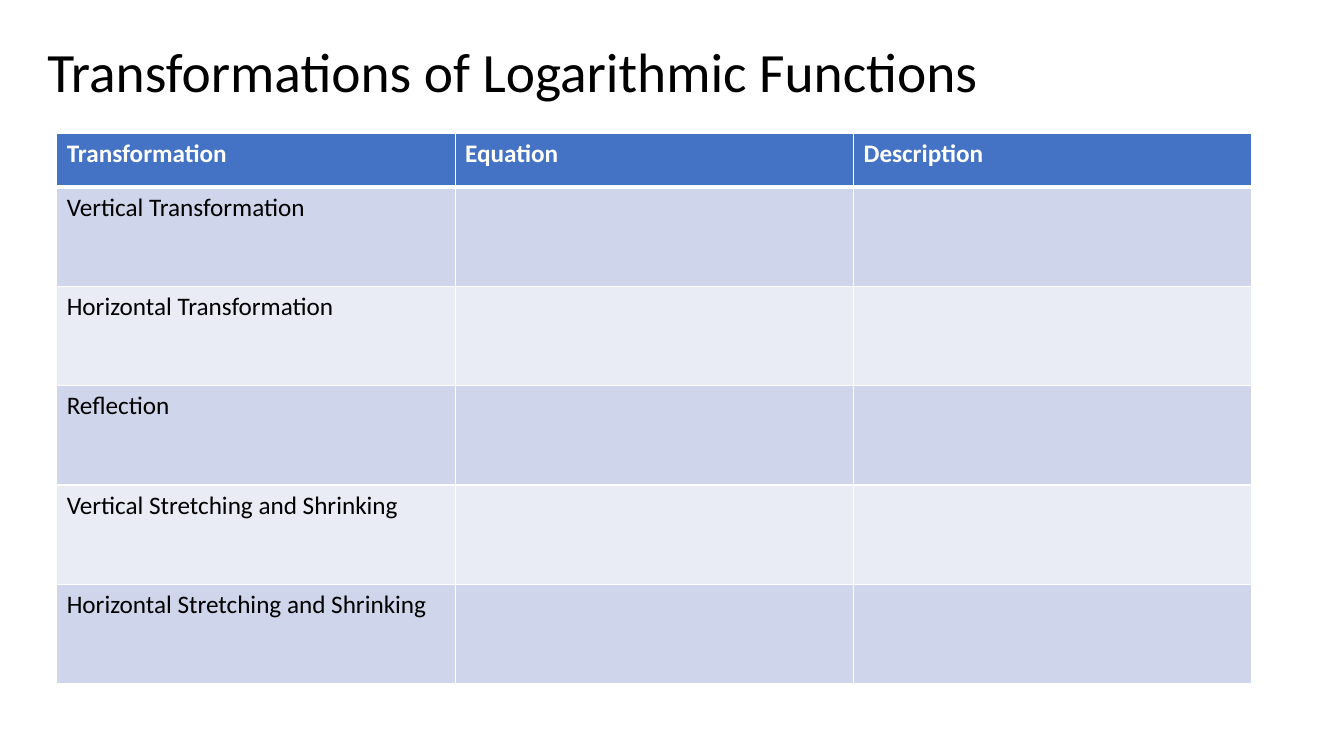
from lxml.etree import SubElement
from pptx import Presentation
from pptx.dml.color import RGBColor
from pptx.enum.text import MSO_ANCHOR, PP_ALIGN
from pptx.oxml.ns import qn
from pptx.util import Pt

HEX = {"head": "4472C4", "dark": "CFD5EA", "light": "E9EBF5",
       "white": "FFFFFF", "black": "000000"}
HEADS = ["Transformation", "Equation", "Description"]
KINDS = ["Vertical Transformation", "Horizontal Transformation", "Reflection",
         "Vertical Stretching and Shrinking",
         "Horizontal Stretching and Shrinking"]


def style(para, size, color, bold=False):
    for run in para.runs:
        run.font.name = "Calibri"
        run.font.size = Pt(size)
        run.font.bold = bold
        run.font.color.rgb = RGBColor.from_string(HEX[color])


def border(cell, side, width):
    line = SubElement(cell._tc.get_or_add_tcPr(), qn(f"a:ln{side}"), w=str(Pt(width)))
    fill = SubElement(line, qn("a:solidFill"))
    SubElement(fill, qn("a:srgbClr"), val=HEX["white"])


deck = Presentation()
deck.slide_width, deck.slide_height = Pt(960), Pt(540)
slide = deck.slides.add_slide(deck.slide_layouts[5])

# Title
title = slide.shapes.title
title.left, title.top, title.width, title.height = Pt(26.64), Pt(28.8), Pt(867.6), Pt(48.24)
frame = title.text_frame
frame.text = "Transformations of Logarithmic Functions"
frame.word_wrap = True
frame.vertical_anchor = MSO_ANCHOR.MIDDLE
para = frame.paragraphs[0]
para.alignment = PP_ALIGN.LEFT
para.line_spacing = 0.9
style(para, 39.6, "black")

# Table grid
rows = [HEADS] + [[kind, "", ""] for kind in KINDS]
table = slide.shapes.add_table(len(rows), len(HEADS), Pt(40.5), Pt(95.4),
                               Pt(853.8), Pt(393)).table
for col in table.columns:
    col.width = Pt(284.6)
for i, row in enumerate(table.rows):
    row.height = Pt(70.95 if i else 38.25)

# Cells: header row, then alternating bands
for i, texts in enumerate(rows):
    band = "head" if i == 0 else "dark" if i % 2 else "light"
    for j, text in enumerate(texts):
        cell = table.cell(i, j)
        for side in "LRTB":
            thick = (i, side) in [(0, "B"), (1, "T")]
            border(cell, side, 3 if thick else 1)
        cell.fill.solid()
        cell.fill.fore_color.rgb = RGBColor.from_string(HEX[band])
        if text:
            cell.text_frame.text = text
            style(cell.text_frame.paragraphs[0], 18,
                  "black" if i else "white", i == 0)

deck.save("out.pptx")
